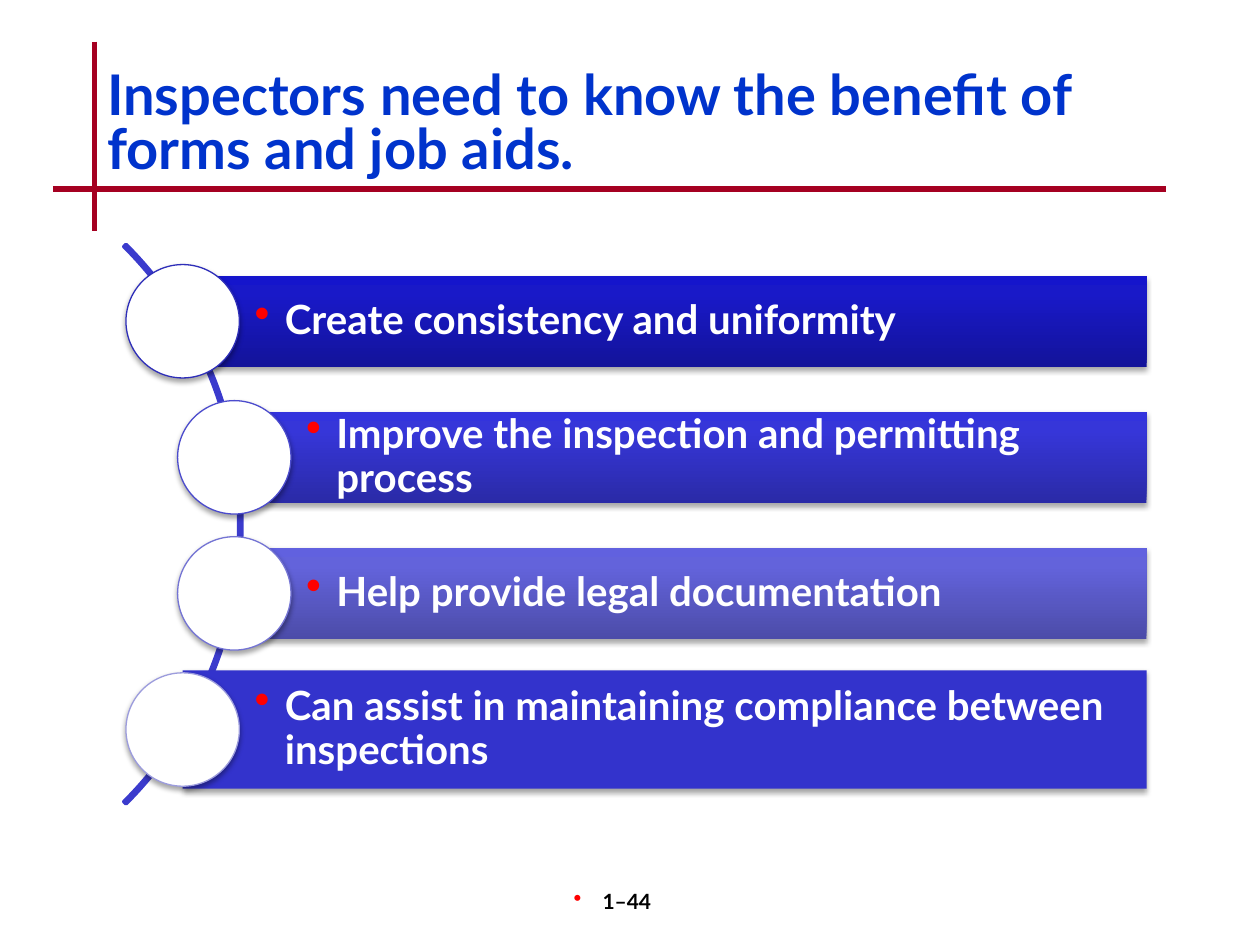
import pptx
import pptx.util
import pptx.dml.color
import pptx.enum.shapes
import pptx.enum.text
import pptx.oxml.ns
from lxml import etree

Inches = pptx.util.Inches
Pt = pptx.util.Pt
RGBColor = pptx.dml.color.RGBColor
Shape = pptx.enum.shapes.MSO_SHAPE
Anchor = pptx.enum.text.MSO_ANCHOR
Align = pptx.enum.text.PP_ALIGN
qn = pptx.oxml.ns.qn

CRIMSON = RGBColor(0xA5, 0x00, 0x21)
TITLE_BLUE = RGBColor(0x00, 0x33, 0xCC)
ARC_BLUE = RGBColor(0x3B, 0x3B, 0xCD)
BAR_BLUE = RGBColor(0x33, 0x33, 0xCC)
RED = RGBColor(0xFF, 0x00, 0x00)
WHITE = RGBColor(0xFF, 0xFF, 0xFF)
BLACK = RGBColor(0x00, 0x00, 0x00)

# Text, bar left, bar height, gradient colours from bottom to top, circle outline
BENEFITS = [
    ("Create consistency and uniformity", 1.45, 0.72,
     ("13139A", "1919C8", "1515CC"), "2E2EB9"),
    ("Improve the inspection and permitting process", 1.86, 0.72,
     ("2A2AA7", "3636D9", "3333DD"), "4B4BCD"),
    ("Help provide legal documentation", 1.86, 0.72,
     ("4C4CA9", "6363DB", "6161DF"), "7474D4"),
    ("Can assist in maintaining compliance between inspections", 1.45, 0.94,
     None, "9C9CDD"),
]
GRADIENT_POSITIONS = (0, 80, 100)
FIRST_CENTER, PITCH = 2.55, 1.08
BAR_RIGHT = 9.1
CIRCLE_SIZE = 0.9


def add_element(parent, tag, **attributes):
    element = etree.SubElement(parent, qn(tag))
    for name, value in attributes.items():
        element.set(name, str(value))
    return element


class SlideBuilder:
    font_name = "Lato"

    def __init__(self, page):
        self.page = page

    def style(self, paragraph, size, color):
        paragraph.font.name = self.font_name
        paragraph.font.size = Pt(size)
        paragraph.font.bold = True
        paragraph.font.color.rgb = color

    def bullet(self, paragraph, indent, space_after=0):
        properties = paragraph._p.get_or_add_pPr()
        properties.set("marL", str(Inches(indent)))
        properties.set("indent", str(-Inches(indent)))
        if space_after:
            spacing = add_element(properties, "a:spcAft")
            add_element(spacing, "a:spcPct", val=space_after * 1000)
        color = add_element(properties, "a:buClr")
        add_element(color, "a:srgbClr", val=RED)
        add_element(properties, "a:buSzPct", val=110000)
        add_element(properties, "a:buChar", char="•")

    def margins(self, frame, left, top, right, bottom):
        frame.margin_left, frame.margin_top = Inches(left), Inches(top)
        frame.margin_right, frame.margin_bottom = Inches(right), Inches(bottom)

    def drop_shadow(self, shape):
        shape.shadow.inherit = False
        effects = shape._element.spPr.find(qn("a:effectLst"))
        shadow = add_element(effects, "a:outerShdw", blurRad=Pt(3.1), dist=Pt(1.8),
                             dir=5400000, rotWithShape=0)
        color = add_element(shadow, "a:srgbClr", val=BLACK)
        add_element(color, "a:alpha", val=35000)

    def gradient(self, shape, colors):
        shape.fill.gradient()
        shape.fill.gradient_angle = 90
        stops = shape._element.spPr.find(".//" + qn("a:gsLst"))
        stops.clear()
        for position, color in zip(GRADIENT_POSITIONS, colors):
            stop = add_element(stops, "a:gs", pos=position * 1000)
            add_element(stop, "a:srgbClr", val=color)

    def title(self, text):
        box = self.page.shapes.title
        box.left, box.top = Inches(0.75), Inches(0.5)
        box.width, box.height = Inches(8.5), Inches(1)
        frame = box.text_frame
        frame.text = text
        frame.word_wrap = True
        frame.auto_size = pptx.enum.text.MSO_AUTO_SIZE.NONE
        frame.vertical_anchor = Anchor.MIDDLE
        paragraph = frame.paragraphs[0]
        paragraph.alignment = Align.LEFT
        paragraph.line_spacing = 0.8
        self.style(paragraph, 32, TITLE_BLUE)

    def rule(self, x1, y1, x2, y2):
        line = self.page.shapes.add_connector(
            pptx.enum.shapes.MSO_CONNECTOR.STRAIGHT,
            Inches(x1), Inches(y1), Inches(x2), Inches(y2))
        line.line.color.rgb = CRIMSON
        line.line.width = Pt(3)
        add_element(line._element.spPr, "a:effectLst")

    def arc(self, left, top, size):
        arc = self.page.shapes.add_shape(
            Shape.BLOCK_ARC, Inches(left), Inches(top), Inches(size), Inches(size))
        for index, value in enumerate((189, 27, 0.004)):
            arc.adjustments[index] = value
        arc.shadow.inherit = False
        arc.fill.background()
        arc.line.color.rgb = ARC_BLUE
        arc.line.width = Pt(2)

    def bar(self, text, left, center, height, colors):
        bar = self.page.shapes.add_shape(
            Shape.RECTANGLE, Inches(left), Inches(center - height / 2),
            Inches(BAR_RIGHT - left), Inches(height))
        if colors:
            self.gradient(bar, colors)
        else:
            bar.fill.solid()
            bar.fill.fore_color.rgb = BAR_BLUE
        bar.line.fill.background()
        self.drop_shadow(bar)
        frame = bar.text_frame
        frame.text = text
        frame.word_wrap = True
        frame.vertical_anchor = Anchor.MIDDLE
        self.margins(frame, 0.57, 0.06, 0.06, 0.06)
        paragraph = frame.paragraphs[0]
        self.bullet(paragraph, 0.24, space_after=35)
        paragraph.alignment = Align.LEFT
        paragraph.line_spacing = 0.9
        self.style(paragraph, 23, WHITE)

    def circle(self, center_x, center_y, outline):
        radius = CIRCLE_SIZE / 2
        circle = self.page.shapes.add_shape(
            Shape.OVAL, Inches(center_x - radius), Inches(center_y - radius),
            Inches(CIRCLE_SIZE), Inches(CIRCLE_SIZE))
        circle.fill.solid()
        circle.fill.fore_color.rgb = WHITE
        circle.line.color.rgb = RGBColor.from_string(outline)
        circle.line.width = Pt(0.75)
        self.drop_shadow(circle)

    def page_number(self, text):
        box = self.page.shapes.add_textbox(Inches(3.92), Inches(7), Inches(2.08), Inches(0.5))
        frame = box.text_frame
        frame.text = text
        frame.word_wrap = True
        self.margins(frame, 0, 0.05, 0.2, 0.05)
        paragraph = frame.paragraphs[0]
        self.bullet(paragraph, 0.23)
        paragraph.alignment = Align.CENTER
        self.style(paragraph, 12, BLACK)


def main():
    deck = pptx.Presentation()
    deck.slide_width, deck.slide_height = Inches(10), Inches(7.5)
    title_only = deck.slide_layouts[5]
    builder = SlideBuilder(deck.slides.add_slide(title_only))

    # Heading with crossed rules
    builder.rule(0.75, 0.33, 0.75, 1.83)
    builder.rule(0.42, 1.5, 9.25, 1.5)
    builder.title("Inspectors need to know the benefit of forms and job aids.")

    # Benefits along the arc
    builder.arc(-4.36, 1.02, 6.28)
    for row, (text, left, height, colors, outline) in enumerate(BENEFITS):
        center = FIRST_CENTER + row * PITCH
        builder.bar(text, left, center, height, colors)
        builder.circle(left, center, outline)

    # Footer
    builder.page_number("1–44")
    deck.save("out.pptx")


if __name__ == "__main__":
    main()
